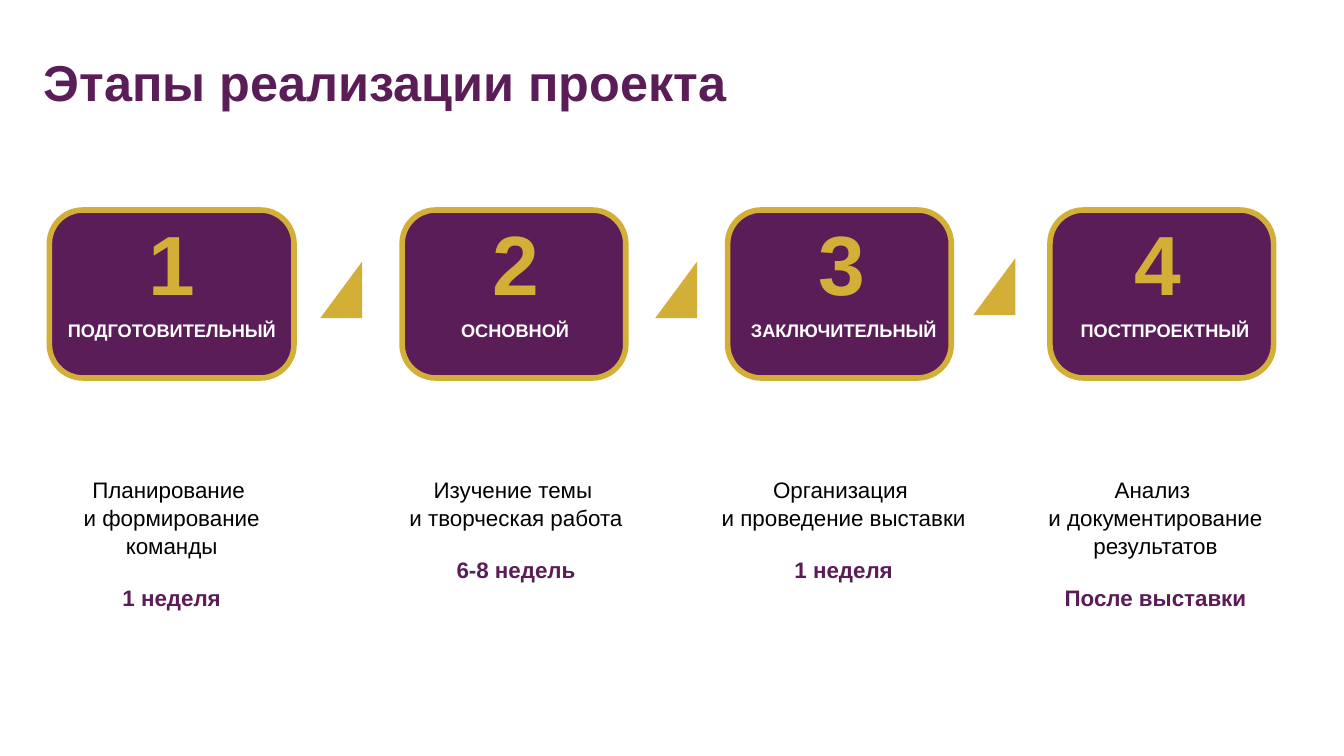
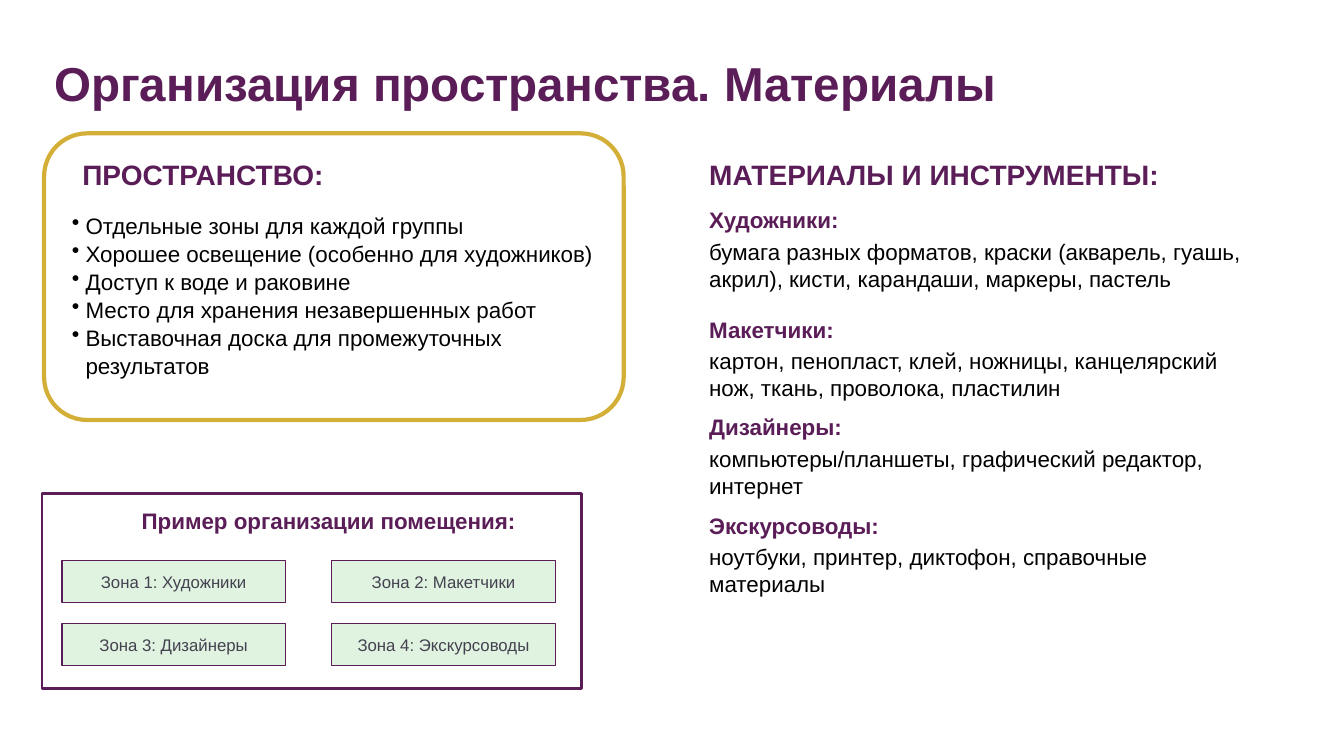
from pptx import Presentation
from pptx.dml.color import RGBColor
from pptx.enum.shapes import MSO_SHAPE
from pptx.enum.text import MSO_ANCHOR, MSO_AUTO_SIZE, PP_ALIGN
from pptx.oxml.ns import qn
from pptx.util import Pt
from lxml.etree import SubElement

# Shared style
PX = 9525
FONT = "Arial"
PURPLE = RGBColor(0x5B, 0x1D, 0x57)
GOLD = RGBColor(0xD4, 0xAF, 0x37)
WHITE = RGBColor(0xFF, 0xFF, 0xFF)
BLACK = RGBColor(0, 0, 0)
MINT = RGBColor(0xE0, 0xF2, 0xE0)
GREY = RGBColor(0x44, 0x42, 0x50)
TITLE_W = 1120

# Stages: card left and width, number / label / description left, texts
STAGES = [
    (47, 233, 47, 47, 30, "ПОДГОТОВИТЕЛЬНЫЙ",
     ("Планирование ", "и формирование команды"), "1 неделя"),
    (383, 213, 385, 384, 358, "ОСНОВНОЙ",
     ("Изучение темы ", "и творческая работа"), "6-8 недель"),
    (693, 213, 695, 697, 670, "ЗАКЛЮЧИТЕЛЬНЫЙ",
     ("Организация ", "и проведение выставки"), "1 неделя"),
    (1000, 213, 996, 1003, 967, "ПОСТПРОЕКТНЫЙ",
     ("Анализ ", "и документирование результатов"), "После выставки"),
]
TRIANGLES = [(298, 256), (617, 256), (920, 253)]

SPACE_NEEDS = [
    "Отдельные зоны для каждой группы",
    "Хорошее освещение (особенно для художников)",
    "Доступ к воде и раковине",
    "Место для хранения незавершенных работ",
    "Выставочная доска для промежуточных результатов",
]
MATERIALS = [
    (192, "Художники:", "бумага разных форматов, краски (акварель, гуашь, "
                        "акрил), кисти, карандаши, маркеры, пастель"),
    (296, "Макетчики:", "картон, пенопласт, клей, ножницы, канцелярский "
                        "нож, ткань, проволока, пластилин"),
    (389, "Дизайнеры:", "компьютеры/планшеты, графический редактор, интернет"),
    (483, "Экскурсоводы:", "ноутбуки, принтер, диктофон, справочные материалы"),
]
ZONES = ["Художники", "Макетчики", "Дизайнеры", "Экскурсоводы"]


def emu(*px):
    return [v * PX for v in px]


def add_run(p, text, size, color, bold=False):
    r = p.add_run()
    r.text = text
    f = r.font
    f.name, f.size, f.bold = FONT, Pt(size), bold
    f.color.rgb = color


def add_text(s, box, text, size, color, bold=False, align=PP_ALIGN.LEFT,
             anchor=MSO_ANCHOR.TOP):
    tf = s.shapes.add_textbox(*emu(*box)).text_frame
    tf.word_wrap = True
    tf.vertical_anchor = anchor
    p = tf.paragraphs[0]
    p.alignment = align
    add_run(p, text, size, color, bold)
    return tf


def add_panel(s, kind, box, fill, line=None, width=0, adj=None):
    sp = s.shapes.add_shape(kind, *emu(*box))
    sp.shadow.inherit = False
    sp.fill.solid()
    sp.fill.fore_color.rgb = fill
    if line is None:
        sp.line.fill.background()
    else:
        sp.line.color.rgb = line
        sp.line.width = Pt(width)
    if adj is not None:
        sp.adjustments[0] = adj
    return sp


def add_bullet(p, indent):
    pPr = p._p.get_or_add_pPr()
    pPr.set("marL", str(indent * PX))
    pPr.set("indent", str(-indent * PX))
    SubElement(pPr, qn("a:buChar")).set("char", "•")


def add_titled_slide(prs, text, left, top, height, size):
    s = prs.slides.add_slide(prs.slide_layouts[5])
    title = s.shapes.title
    title.left, title.top, title.width, title.height = emu(left, top, TITLE_W, height)
    tf = title.text_frame
    tf.word_wrap = True
    tf.auto_size = MSO_AUTO_SIZE.NONE
    tf.vertical_anchor = MSO_ANCHOR.TOP
    p = tf.paragraphs[0]
    p.alignment = PP_ALIGN.LEFT
    add_run(p, text, size, PURPLE, True)
    return s


def build_stages(prs):
    s = add_titled_slide(prs, "Этапы реализации проекта", 32, 44, 68, 36)
    center, middle = PP_ALIGN.CENTER, MSO_ANCHOR.MIDDLE
    for n, (x, w, num_x, label_x, text_x, label, lines, term) in enumerate(STAGES, 1):
        # Card with number and name
        add_panel(s, MSO_SHAPE.ROUNDED_RECTANGLE, (x, 200, w, 160), PURPLE, GOLD, 4, 0.2)
        add_text(s, (num_x, 196, w, 107), str(n), 60, GOLD, True, center, middle)
        add_text(s, (label_x, 299, w, 31), label, 13, WHITE, True, center, middle)
        # Description and duration
        tf = add_text(s, (text_x, 448, 267, 142), lines[0], 16, BLACK, align=center)
        p = tf.paragraphs[0]
        p.line_spacing = Pt(20)
        p.add_line_break()
        add_run(p, lines[1], 16, BLACK)
        p = tf.add_paragraph()
        p.alignment = center
        p.space_before = Pt(18)
        add_run(p, term, 16, PURPLE, True)
    # Markers between the cards
    for x, y in TRIANGLES:
        sp = add_panel(s, MSO_SHAPE.RIGHT_TRIANGLE, (x, y, 54, 40), GOLD)
        sp.rotation = 270


def build_space(prs):
    s = add_titled_slide(prs, "Организация пространства. Материалы", 42, 47, 64, 34)

    # Space requirements
    add_panel(s, MSO_SHAPE.ROUNDED_RECTANGLE, (42, 127, 552, 273), WHITE, GOLD, 3, 0.15)
    add_text(s, (69, 145, 480, 42), "ПРОСТРАНСТВО:", 20, PURPLE, True)
    tf = add_text(s, (59, 196, 544, 169), SPACE_NEEDS[0], 16, BLACK)
    for need in SPACE_NEEDS[1:]:
        add_run(tf.add_paragraph(), need, 16, BLACK)
    for p in tf.paragraphs:
        p.line_spacing = Pt(20)
        add_bullet(p, 13)

    # Materials by group
    add_text(s, (666, 145, 534, 42), "МАТЕРИАЛЫ И ИНСТРУМЕНТЫ:", 20, PURPLE, True)
    for y, group, items in MATERIALS:
        add_text(s, (666, y, 534, 36), group, 16, PURPLE, True)
        add_text(s, (666, y + 30, 534, 61), items, 16, BLACK)

    # Room plan
    add_panel(s, MSO_SHAPE.RECTANGLE, (40, 470, 514, 186), WHITE, PURPLE, 2)
    add_text(s, (73, 478, 480, 36), "Пример организации помещения:", 16, PURPLE, True,
             PP_ALIGN.CENTER)
    for i, group in enumerate(ZONES):
        row, col = divmod(i, 2)
        box = (59 + 257 * col, 534 + 60 * row, 213, 40)
        tf = add_panel(s, MSO_SHAPE.RECTANGLE, box, MINT, PURPLE, 1).text_frame
        tf.vertical_anchor = MSO_ANCHOR.MIDDLE
        p = tf.paragraphs[0]
        p.alignment = PP_ALIGN.CENTER
        add_run(p, f"Зона {i + 1}: {group}", 12, GREY)


def main():
    prs = Presentation()
    prs.slide_width, prs.slide_height = emu(1280, 720)
    build_stages(prs)
    build_space(prs)
    prs.save("out.pptx")


if __name__ == "__main__":
    main()
